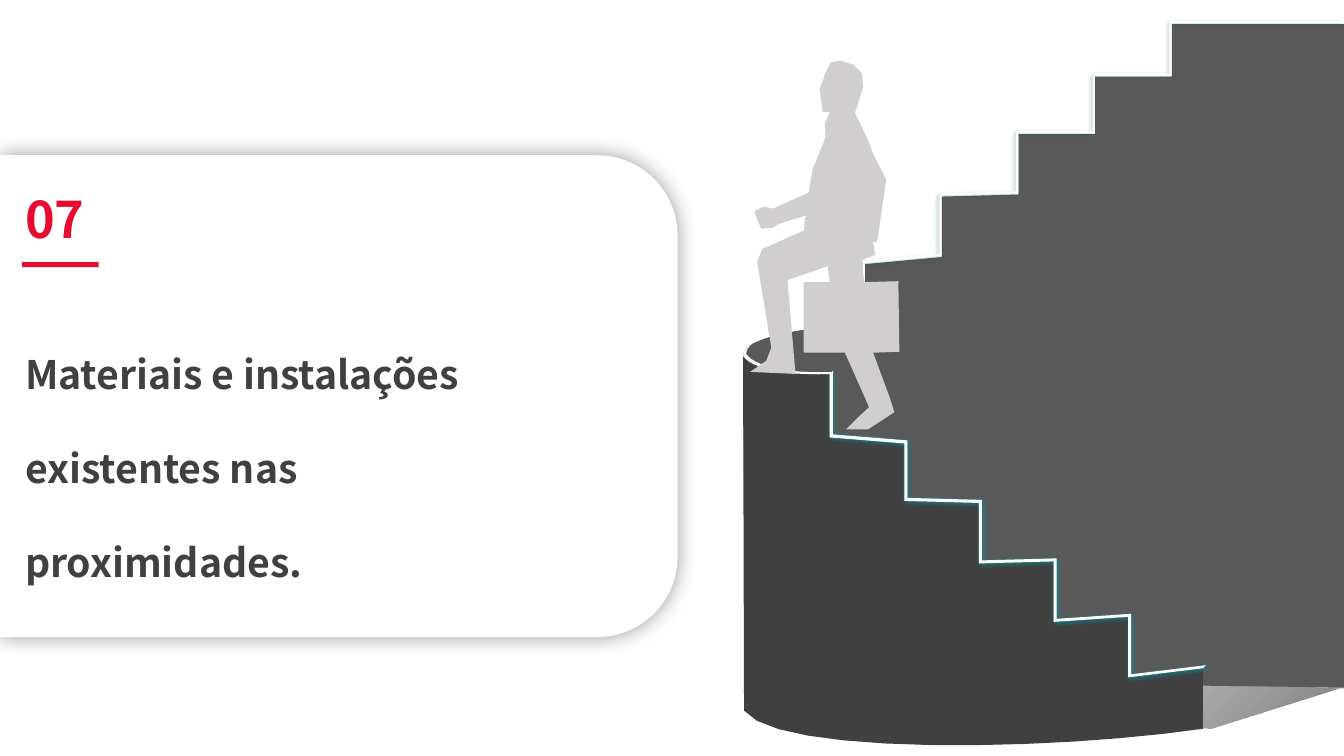
import pptx
import pptx.util
import pptx.dml.color
import pptx.enum.shapes
import pptx.enum.text
import pptx.oxml
import pptx.oxml.ns
from pptx.util import Inches

FONT = "Noto Sans CJK SC"
RED, DARK, WHITE = "E60B2F", "404040", "FFFFFF"
SHAPE = pptx.enum.shapes.MSO_SHAPE

# Heights of each tread at its left and right end, in inches
UPPER_TREADS = [(2.59, 2.52), (1.92, 1.9), (1.3, 1.3), (0.73, 0.73), (0.21, 0.21)]
LOWER_TREADS = [(4.34, 4.4), (4.97, 4.99), (5.59, 5.57), (6.17, 6.12), (6.72, 6.63)]
FLOOR_SHADE = [(8.98, 6.35), (13.33, 6.81), (12, 7.23), (7.78, 6.99)]
LEADING_SIDE = [
    (7.44, 3.69), (7.6, 3.58), (7.65, 3.45), (7.51, 2.6), (7.56, 2.47), (7.97, 2.29),
    (7.99, 2.14), (7.73, 2.22), (7.66, 2.26), (7.55, 2.27), (7.48, 2.1), (7.57, 2.05),
    (7.67, 2.07), (8.02, 1.91), (8.06, 1.68), (8.19, 1.36), (8.18, 1.23), (8.23, 1.11),
    (8.16, 1.11), (8.13, 0.88), (8.19, 0.72), (8.24, 0.62)]
TRAILING_SIDE = [
    (8.33, 0.6), (8.46, 0.64), (8.55, 0.73), (8.56, 0.87), (8.48, 1.12), (8.61, 1.39),
    (8.66, 1.53), (8.79, 1.78), (8.7, 2.4), (8.66, 2.4), (8.68, 2.53), (8.55, 2.58),
    (8.57, 2.8), (8.91, 2.79), (8.92, 3.49), (8.66, 3.5), (8.83, 3.96), (8.87, 4.09),
    (8.61, 4.26), (8.39, 4.26), (8.5, 4.15), (8.62, 4.04), (8.38, 3.5), (7.97, 3.5),
    (7.97, 2.8), (8.23, 2.8), (8.21, 2.64), (7.81, 2.78), (7.89, 3.71)]


def rgb(color):
    return pptx.dml.color.RGBColor.from_string(color)


def curve(start, pull_1, pull_2, end, steps=12):
    """Points of a Bezier curve."""
    points = []
    for i in range(steps + 1):
        t = i / steps
        weights = ((1 - t) ** 3, 3 * t * (1 - t) ** 2, 3 * t * t * (1 - t), t ** 3)
        corners = (start, pull_1, pull_2, end)
        points.append(tuple(sum(w * p[axis] for w, p in zip(weights, corners))
                            for axis in (0, 1)))
    return points


def stairs(x, y, run, treads):
    """Stair line that starts at x, y with a riser."""
    points = [(x, y)]
    for i, (left, right) in enumerate(treads):
        points += [(x + i * run, left), (x + (i + 1) * run, right)]
    return points


def shift(points, dx, dy):
    return [(x + dx, y + dy) for x, y in points]


def band(line, dx, dy):
    """Thin strip between a line and the same line moved by dx, dy."""
    return line + shift(line, dx, dy)[::-1]


def style(sp, color):
    sp.shadow.inherit = False
    sp.line.fill.background()
    sp.fill.solid()
    sp.fill.fore_color.rgb = rgb(color)
    return sp


def add_outline(slide, points, color):
    (x, y), *rest = [(Inches(px), Inches(py)) for px, py in points]
    builder = slide.shapes.build_freeform(x, y)
    builder.add_line_segments(rest, close=True)
    return style(builder.convert_to_shape(), color)


def add_preset(slide, kind, left, top, width, height, color):
    box = [Inches(v) for v in (left, top, width, height)]
    return style(slide.shapes.add_shape(kind, *box), color)


def cast_shadow(sp, color, alpha, blur, dist, angle):
    """Outer shadow: alpha in percent, blur and distance in points."""
    effects = sp._element.spPr.find(pptx.oxml.ns.qn("a:effectLst"))
    effects.append(pptx.oxml.parse_xml(
        f'<a:outerShdw {pptx.oxml.ns.nsdecls("a")} blurRad="{pptx.util.Pt(blur)}" '
        f'dist="{pptx.util.Pt(dist)}" dir="{angle * 60000}" algn="ctr" rotWithShape="0">'
        f'<a:srgbClr val="{color}"><a:alpha val="{alpha * 1000}"/></a:srgbClr></a:outerShdw>'))


def fade(sp):
    """Diagonal grey gradient whose light end is partly transparent."""
    sp.fill.gradient()
    sp.fill.gradient_angle = 315
    for stop, color in zip(sp.fill.gradient_stops, ("F1F1F1", "808080")):
        stop.color.rgb = rgb(color)
    light = sp._element.spPr.find(".//" + pptx.oxml.ns.qn("a:srgbClr"))
    light.append(pptx.oxml.parse_xml(
        f'<a:alpha {pptx.oxml.ns.nsdecls("a")} val="60000"/>'))


def add_text(slide, left, top, width, height, text, size, color, spacing=1.0):
    box = [Inches(v) for v in (left, top, width, height)]
    tf = slide.shapes.add_textbox(*box).text_frame
    tf.word_wrap = True
    tf.auto_size = pptx.enum.text.MSO_AUTO_SIZE.SHAPE_TO_FIT_TEXT
    tf.text = text
    p = tf.paragraphs[0]
    p.line_spacing = spacing
    font = p.runs[0].font
    font.name, font.size, font.bold = FONT, pptx.util.Pt(size), True
    font.color.rgb = rgb(color)


def add_staircase(slide):
    upper = stairs(8.56, 3.19, 0.76, UPPER_TREADS)
    upper[-1] = (13.31, 0.21)
    lower = stairs(8.23, 3.71, 0.74, LOWER_TREADS)
    rim_top = curve((8.57, 3.19), (7.98, 3.26), (7.37, 3.33), (7.37, 3.53))
    rim_front = curve((7.37, 3.53), (7.44, 3.64), (7.73, 3.73), (8.24, 3.71))
    wall_foot = curve((11.93, 7.23), (10.43, 7.45), (7.71, 7.5), (7.38, 7.05))

    for dx, dy in ((0, 0), (1.38, -0.4)):
        fade(add_outline(slide, shift(FLOOR_SHADE, dx, dy), "F1F1F1"))
    inner_wall = shift(upper, 0.02, 0.03) + [(13.34, 6.82), (7.81, 6.75), (7.39, 5.98)]
    add_outline(slide, inner_wall + rim_top[::-1], "595959")
    add_outline(slide, lower + wall_foot + rim_front, DARK)
    upper_edge = add_outline(slide, band(upper, 0.02, 0.02), WHITE)
    cast_shadow(upper_edge, "015A63", 40, 3, 2, 135)
    lower_edge = add_outline(slide, band(lower, 0.03, -0.03), WHITE)
    cast_shadow(lower_edge, "0192A1", 100, 3, 1, 45)
    add_outline(slide, band(rim_top + rim_front, 0.03, -0.02), WHITE)


def add_title_card(slide):
    card = add_preset(slide, SHAPE.ROUND_2_SAME_RECTANGLE, 0.97, 0.57, 4.78, 6.72, WHITE)
    card.rotation = 90
    cast_shadow(card, "000000", 40, 15, 0, 0)
    add_preset(slide, SHAPE.RECTANGLE, 0.22, 2.6, 0.76, 0.05, RED)
    add_text(slide, 0.15, 2.96, 5.47, 2.79,
             "Materiais e instalações existentes nas proximidades.", 28, DARK, spacing=2.0)
    add_text(slide, 0.15, 1.82, 3.24, 0.71, "07", 36, RED)


def main():
    prs = pptx.Presentation()
    prs.slide_width, prs.slide_height = Inches(13.33), Inches(7.5)
    slide = prs.slides.add_slide(prs.slide_layouts[6])
    add_preset(slide, SHAPE.RECTANGLE, 0, 0, 13.33, 7.5, WHITE)
    add_staircase(slide)
    add_outline(slide, LEADING_SIDE + TRAILING_SIDE, "D0CECE")
    add_title_card(slide)
    prs.save("out.pptx")


if __name__ == "__main__":
    main()
